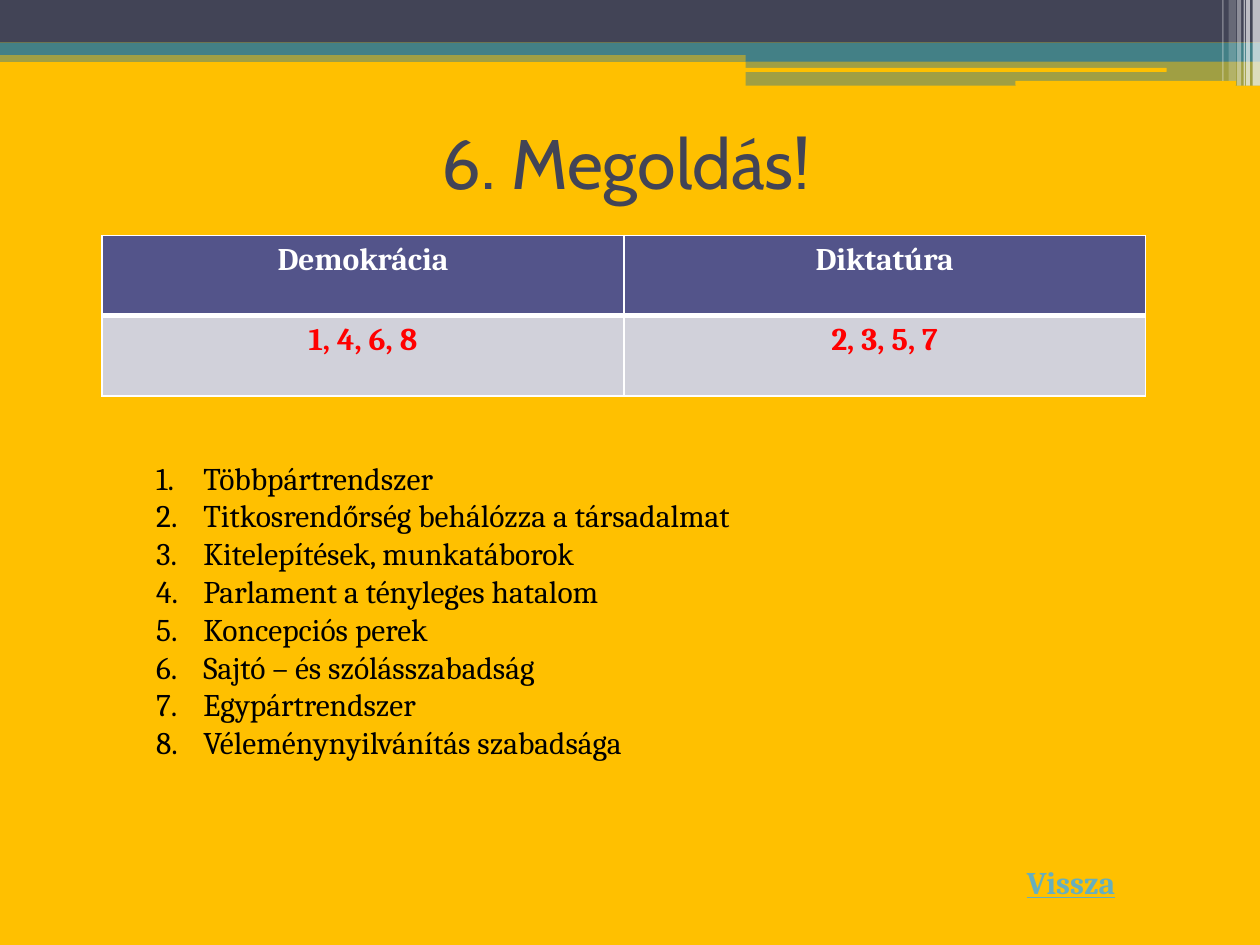
import pptx
import pptx.util
import pptx.dml.color
import pptx.enum.shapes
import pptx.enum.text
import pptx.oxml
import pptx.oxml.ns

Cm, Pt = pptx.util.Cm, pptx.util.Pt
SHAPE = pptx.enum.shapes.MSO_SHAPE
ALIGN = pptx.enum.text.PP_ALIGN
ANCHOR = pptx.enum.text.MSO_ANCHOR
FIT = pptx.enum.text.MSO_AUTO_SIZE
qn = pptx.oxml.ns.qn

WIDE, HIGH = 25.4, 19.05
COLORS = {
    "gold": "FFC000", "slate": "424456", "teal": "438086", "white": "FFFFFF",
    "head": "53548A", "body": "D1D1DA", "red": "FF0000", "black": "000000",
    "link": "67AFBD",
}
ITEMS = [
    "Többpártrendszer",
    "Titkosrendőrség behálózza a társadalmat",
    "Kitelepítések, munkatáborok",
    "Parlament a tényleges hatalom",
    "Koncepciós perek",
    "Sajtó – és szólásszabadság",
    "Egypártrendszer",
    "Véleménynyilvánítás szabadsága",
]
ROWS = [["Demokrácia", "Diktatúra"], ["1, 4, 6, 8", "2, 3, 5, 7"]]


def paint(fill, color):
    fill.solid()
    fill.fore_color.rgb = pptx.dml.color.RGBColor.from_string(COLORS[color])


def style(par, color, size=18, name="Cambria", bold=False):
    font = par.font
    font.name, font.size, font.bold = name, Pt(size), bold
    paint(font.fill, color)


def add_bar(slide, box, color, alpha=100, kind=SHAPE.RECTANGLE):
    bar = slide.shapes.add_shape(kind, *map(Cm, box))
    bar.shadow.inherit = False
    bar.line.fill.background()
    paint(bar.fill, color)
    if alpha < 100:
        tint = next(bar.element.spPr.iter(qn("a:srgbClr")))
        pptx.oxml.ns  # namespace helpers
        tint.append(pptx.oxml.parse_xml(
            '<a:alpha xmlns:a="http://schemas.openxmlformats.org/drawingml/2006/main"'
            f' val="{alpha * 1000}"/>'))


def add_band(slide, left, top, width):
    """Draw the banner: bars, thin gold lines and pale stripes at the right."""
    step = left + 15.03
    rest = left + width - step
    add_bar(slide, (left, top + 1.02, width, 0.23), "teal", 50)
    add_bar(slide, (left, top, width, 0.86), "slate")
    add_bar(slide, (left, top + 0.86, width, 0.25), "teal")
    add_bar(slide, (step, top + 0.99, rest, 0.25), "teal")
    add_bar(slide, (step, top + 1.23, rest, 0.5), "teal", 50)
    for x, y, w, h in [(15.01, 1.37, 8.51, 0.08), (20.47, 1.63, 4.45, 0.1)]:
        add_bar(slide, (left + x, top + y, w, h), "gold",
                kind=SHAPE.ROUNDED_RECTANGLE)
    stripes = [(0.15, 0.15, 1.73, 65), (0.28, 0.08, 1.73, 65),
               (0.33, 0.03, 1.73, 60), (0.46, 0.08, 1.73, 40),
               (0.63, 0.15, 1.63, 20), (0.76, 0.03, 1.63, 30)]
    for back, w, h, alpha in stripes:
        add_bar(slide, (left + width - back, top, w, h), "white", alpha)


def add_text(slide, box, lines, wrap=True):
    """Add a text box with one paragraph per line and return its frame."""
    frame = slide.shapes.add_textbox(*map(Cm, box)).text_frame
    frame.word_wrap = wrap
    frame.text = "\n".join(lines)
    return frame


def add_title(slide, box):
    frame = add_text(slide, box, ["6. Megoldás!"])
    frame.vertical_anchor = ANCHOR.MIDDLE
    par = frame.paragraphs[0]
    par.alignment = ALIGN.CENTER
    style(par, "slate", 40, "Cabin")


def add_list(slide, box):
    frame = add_text(slide, box, ITEMS)
    frame.auto_size = FIT.SHAPE_TO_FIT_TEXT
    for par in frame.paragraphs:
        style(par, "black")
        props = par._p.get_or_add_pPr()
        props.set("marL", str(Cm(0.95)))
        props.set("indent", str(-Cm(0.95)))
        mark = pptx.oxml.parse_xml(
            '<a:buAutoNum xmlns:a="http://schemas.openxmlformats.org/drawingml/2006/main"'
            ' type="arabicPeriod"/>')
        props.insert(0, mark)


def add_back(slide, box):
    frame = add_text(slide, box, ["Vissza"], wrap=False)
    frame.auto_size = FIT.SHAPE_TO_FIT_TEXT
    par = frame.paragraphs[0]
    style(par, "link", bold=True)
    par.font.underline = True


def add_edges(cell, base):
    """Give a cell white borders, with the lower one base points wide."""
    props = cell._tc.get_or_add_tcPr()
    for spot, side in enumerate("LRTB"):
        size = Pt(base if side == "B" else 1)
        props.insert(spot, pptx.oxml.parse_xml(
            f'<a:ln{side} xmlns:a="http://schemas.openxmlformats.org/drawingml/2006/main"'
            f' w="{size}"><a:solidFill><a:srgbClr val="{COLORS["white"]}"/>'
            f'</a:solidFill></a:ln{side}>'))


def add_grid(slide, box):
    grid = slide.shapes.add_table(len(ROWS), len(ROWS[0]), *map(Cm, box)).table
    looks = [("head", "white", 3), ("body", "red", 1)]
    for r, (row, (back, ink, base)) in enumerate(zip(ROWS, looks)):
        for c, text in enumerate(row):
            cell = grid.cell(r, c)
            cell.text = text
            paint(cell.fill, back)
            par = cell.text_frame.paragraphs[0]
            par.alignment = ALIGN.CENTER
            style(par, ink, bold=True)
            # The line under the head is shared with the row below.
            add_edges(cell, base)
            if r:
                top = cell._tc.tcPr.find(qn("a:lnT"))
                top.set("w", str(Pt(looks[r - 1][2])))


def main():
    deck = pptx.Presentation()
    deck.slide_width, deck.slide_height = Cm(WIDE), Cm(HIGH)
    slide = deck.slides.add_slide(deck.slide_layouts[6])
    paint(slide.background.fill, "gold")
    add_band(slide, 0, 0, WIDE)
    add_title(slide, (1.19, 1.78, 22.86, 2.97))
    add_back(slide, (20.45, 17.27, 2.62, 1.02))
    add_grid(slide, (2.06, 4.75, 21.03, 3.23))
    add_list(slide, (2.9, 9.12, 17.8, 6.4))
    deck.save("out.pptx")


if __name__ == "__main__":
    main()
